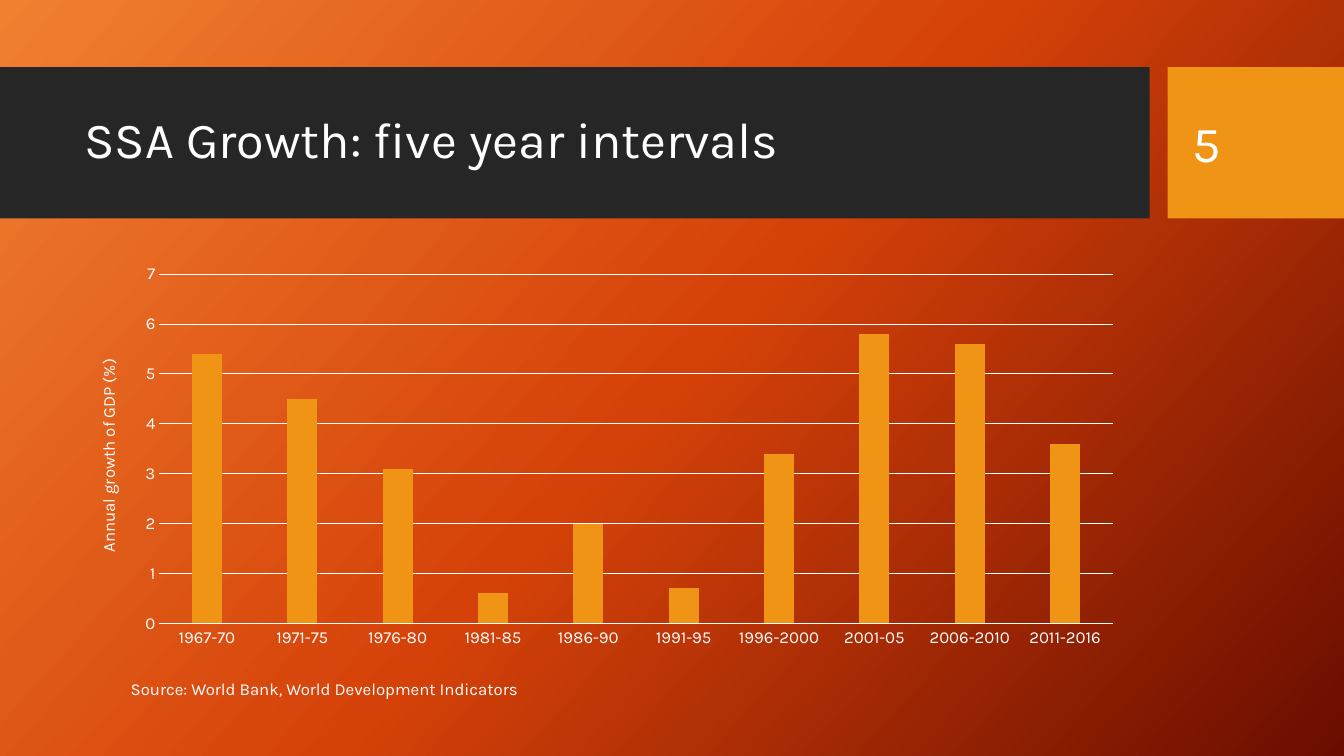
import copy

import pptx
import pptx.chart.data
import pptx.dml.color
import pptx.enum.chart
import pptx.enum.text
import pptx.oxml
import pptx.oxml.ns
import pptx.util

PX = 9525  # EMU per px, 96 px to the inch
FONT = "Karla"
COLORS = {
    "glow": "F18031", "ember": "D54209", "dark": "6A0D00",
    "band": "262626", "accent": "F09415", "white": "FFFFFF",
}
GROWTH = {
    "1967-70": 5.4, "1971-75": 4.5, "1976-80": 3.1, "1981-85": 0.6,
    "1986-90": 2, "1991-95": 0.7, "1996-2000": 3.4, "2001-05": 5.8,
    "2006-2010": 5.6, "2011-2016": 3.6,
}
PLOT_LAYOUT = {"x": 0.08, "y": 0.04, "w": 0.9, "h": 0.88}


def rgb(name):
    return pptx.dml.color.RGBColor.from_string(COLORS[name])


def emu(box):
    return [length * PX for length in box]


def set_font(font, size):
    values = {"name": FONT, "size": pptx.util.Pt(size), "bold": False}
    for key, value in values.items():
        setattr(font, key, value)
    font.color.rgb = rgb("white")


def set_line(line):
    line.color.rgb = rgb("white")
    line.width = pptx.util.Pt(0.75)


def add_background(s):
    fill = s.background.fill
    fill.gradient()
    fill.gradient_angle = 360 - 42
    stop_list = s.element.xpath(".//a:gsLst")[0]
    stop_list.insert(1, copy.deepcopy(stop_list[0]))
    stops = zip(fill.gradient_stops, ("glow", "ember", "dark"), (0, 0.5, 1))
    for stop, color, position in stops:
        stop.color.rgb = rgb(color)
        stop.position = position


def add_panel(s, box, color):
    sp = s.shapes.add_shape(pptx.enum.shapes.MSO_SHAPE.RECTANGLE, *emu(box))
    sp.shadow.inherit = False
    sp.fill.solid()
    sp.fill.fore_color.rgb = rgb(color)
    sp.line.fill.background()


def add_text(s, box, text, size, line_spacing=1.0):
    tf = s.shapes.add_textbox(*emu(box)).text_frame
    tf.word_wrap = True
    tf.vertical_anchor = pptx.enum.text.MSO_ANCHOR.MIDDLE
    p = tf.paragraphs[0]
    p.line_spacing = line_spacing
    r = p.add_run()
    r.text = text
    set_font(r.font, size)


def add_header(s, box, title, number):
    """Place the title band and the number tile side by side."""
    left, top, width, height = box
    tile, gap = 168, 17
    band = width - tile - gap
    tile_left = left + band + gap
    add_panel(s, (left, top, band, height), "band")
    add_panel(s, (tile_left, top, tile, height), "accent")
    add_text(s, (left + 71, top + 15, band - 86, 113), title, 36, 0.9)
    add_text(s, (tile_left + 14, top + 15, 121, 114), number, 36)


def set_plot_layout(chart):
    """Fix the inner plot area as fractions of the chart."""
    parts = "".join(f'<c:{key}Mode val="edge"/>' for key in "xy")
    parts += "".join(f'<c:{key} val="{value}"/>' for key, value in PLOT_LAYOUT.items())
    layout = pptx.oxml.parse_xml(
        f'<c:layout {pptx.oxml.ns.nsdecls("c")}><c:manualLayout>'
        f'<c:layoutTarget val="inner"/>{parts}</c:manualLayout></c:layout>')
    plot_area = chart.element.xpath(".//c:plotArea")[0]
    for default in plot_area.xpath("./c:layout"):
        plot_area.remove(default)
    plot_area.insert(0, layout)


def add_growth_chart(s, box):
    data = pptx.chart.data.CategoryChartData()
    data.categories = list(GROWTH)
    data.add_series("Series 1", list(GROWTH.values()))
    kind = pptx.enum.chart.XL_CHART_TYPE.COLUMN_CLUSTERED
    chart = s.shapes.add_chart(kind, *emu(box), data).chart
    chart.has_legend = chart.has_title = False
    set_font(chart.font, 10)

    plot = chart.plots[0]
    for key, value in {"gap_width": 219, "overlap": -27, "vary_by_categories": False}.items():
        setattr(plot, key, value)
    fill = plot.series[0].format.fill
    fill.solid()
    fill.fore_color.rgb = rgb("accent")

    for axis in (chart.category_axis, chart.value_axis):
        axis.major_tick_mark = axis.minor_tick_mark = pptx.enum.chart.XL_TICK_MARK.NONE
        set_font(axis.tick_labels.font, 12)
    set_line(chart.category_axis.format.line)

    axis = chart.value_axis
    axis.minimum_scale, axis.maximum_scale, axis.major_unit = 0, 7, 1
    axis.format.line.fill.background()
    set_line(axis.major_gridlines.format.line)
    tf = axis.axis_title.text_frame
    tf.text = "Annual growth of GDP (%)"
    set_font(tf.paragraphs[0].runs[0].font, 12)
    set_plot_layout(chart)


def add_growth_slide(prs):
    s = prs.slides.add_slide(prs.slide_layouts[6])
    add_background(s)
    add_header(s, (0, 64, 1280, 144), "SSA Growth: five year intervals", "5")
    add_growth_chart(s, (71, 246, 1009, 378))
    add_text(s, (115, 641, 966, 29), "Source: World Bank, World Development Indicators", 12)


def main():
    prs = pptx.Presentation()
    prs.slide_width, prs.slide_height = emu((1280, 720))
    add_growth_slide(prs)
    prs.save("out.pptx")


if __name__ == "__main__":
    main()
